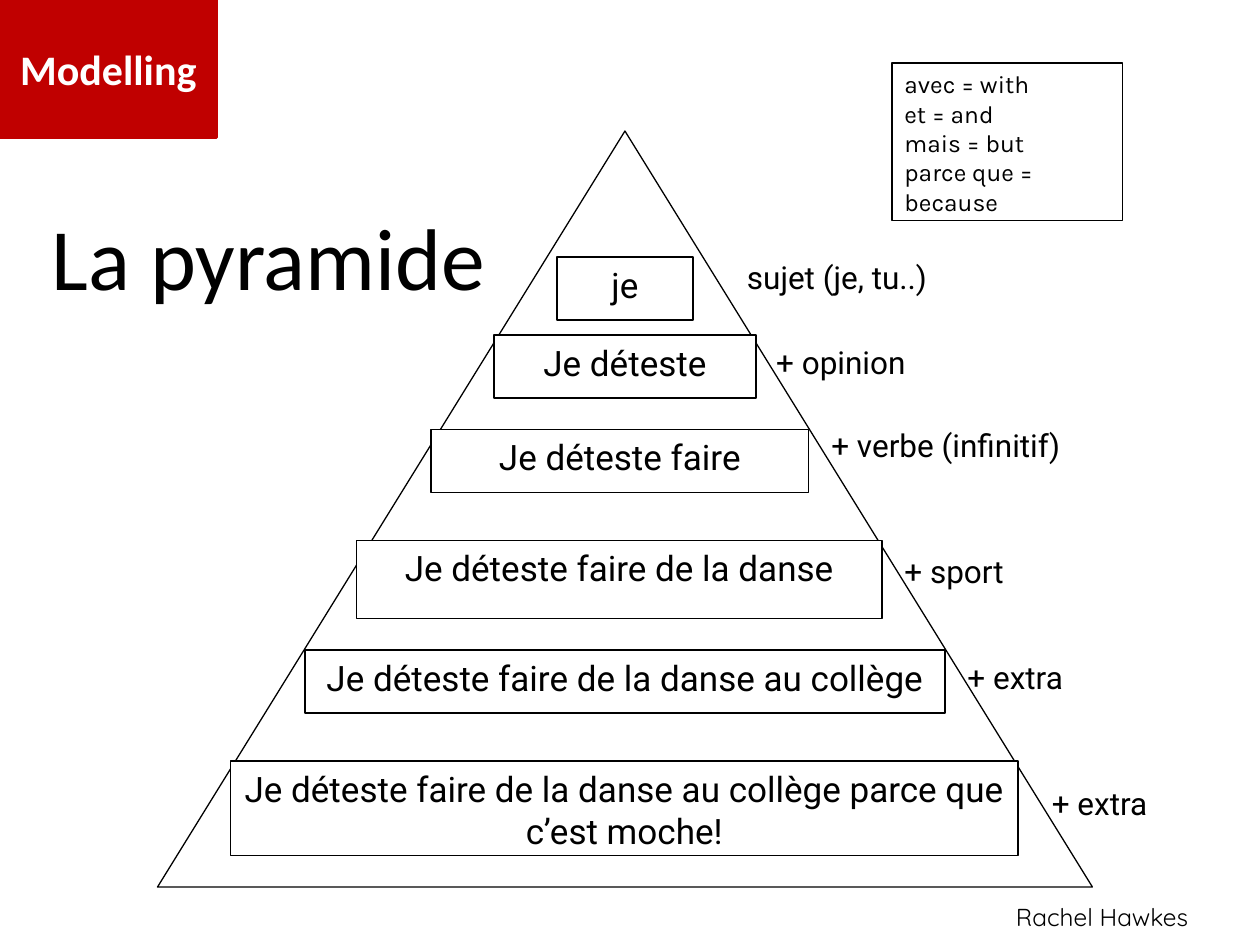
import pptx
import pptx.util
from pptx.dml.color import RGBColor
from pptx.enum.shapes import MSO_SHAPE
from pptx.enum.text import MSO_ANCHOR, MSO_AUTO_SIZE, PP_ALIGN
from pptx.util import Inches

BLACK = RGBColor(0x00, 0x00, 0x00)
WHITE = RGBColor(0xFF, 0xFF, 0xFF)
RED = RGBColor(0xC0, 0x00, 0x00)


def add_outlined(kind, left, top, width, height, fill=WHITE, line=BLACK, weight=0.75):
    shape = page.shapes.add_shape(
        kind, Inches(left), Inches(top), Inches(width), Inches(height))
    shape.shadow.inherit = False
    shape.fill.solid()
    shape.fill.fore_color.rgb = fill
    shape.line.color.rgb = line
    shape.line.width = pptx.util.Pt(weight)
    return shape


def write(shape, text, font, size, align=PP_ALIGN.LEFT, color=BLACK,
          bold=False, anchor=MSO_ANCHOR.TOP):
    frame = shape.text_frame
    frame.text = text
    frame.word_wrap = True
    frame.auto_size = MSO_AUTO_SIZE.NONE
    frame.vertical_anchor = anchor
    for para in frame.paragraphs:
        para.alignment = align
        para.font.name = font
        para.font.size = pptx.util.Pt(size)
        para.font.bold = bold
        para.font.color.rgb = color


deck = pptx.Presentation()
deck.slide_width = Inches(10)
deck.slide_height = Inches(7.5)
page = deck.slides.add_slide(deck.slide_layouts[5])

# Title
title = page.shapes.title
title.left, title.top = Inches(0.31), Inches(1.56)
title.width, title.height = Inches(4.17), Inches(0.93)
write(title, "La pyramide", "Calibri", 50)

# Pyramid outline
add_outlined(MSO_SHAPE.FLOWCHART_EXTRACT, 1.25, 1.04, 7.42, 6)

# Growing sentence, one box per level
levels = [
    ("je", 4.42, 2.04, 1.08, 0.5),
    ("Je déteste", 3.92, 2.66, 2.08, 0.5),
    ("Je déteste faire", 3.42, 3.41, 3, 0.5),
    ("Je déteste faire de la danse", 2.83, 4.29, 4.17, 0.62),
    ("Je déteste faire de la danse au collège", 2.42, 5.16, 5.08, 0.5),
    ("Je déteste faire de la danse au collège parce que c’est moche!",
     1.83, 6.04, 6.25, 0.75),
]
for sentence, *place in levels:
    box = add_outlined(MSO_SHAPE.RECTANGLE, *place)
    write(box, sentence, "Roboto", 20, PP_ALIGN.CENTER)

# Vocabulary box
vocabulary = add_outlined(MSO_SHAPE.RECTANGLE, 7.08, 0.5, 1.83, 1.25)
write(vocabulary, "avec = with\net = and\nmais = but\nparce que = because", "Karla", 14)

# Labels beside the levels, then the author
labels = [
    ("sujet (je, tu..)", 5.83, 2, 2.5),
    (" + opinion", 6, 2.67, 2.5),
    ("+ verbe (infinitif)", 6.5, 3.33, 2.83),
    ("+ sport", 7.08, 4.33, 1.67),
    ("+ extra", 7.58, 5.17, 1.5),
    ("+ extra", 8.25, 6.17, 1.5),
]
for label, left, top, width in labels:
    box = page.shapes.add_textbox(Inches(left), Inches(top), Inches(width), Inches(0.5))
    write(box, label, "Roboto", 18)

author = page.shapes.add_textbox(Inches(7.19), Inches(7.11), Inches(2.34), Inches(0.34))
write(author, "Rachel Hawkes", "Quicksand", 14, PP_ALIGN.RIGHT)

# Corner tag
tag = add_outlined(MSO_SHAPE.RECTANGLE, 0, 0, 1.72, 1.09, RED, RED, 2)
write(tag, "Modelling", "Calibri", 24, PP_ALIGN.CENTER, WHITE, True, MSO_ANCHOR.MIDDLE)

deck.save("out.pptx")
